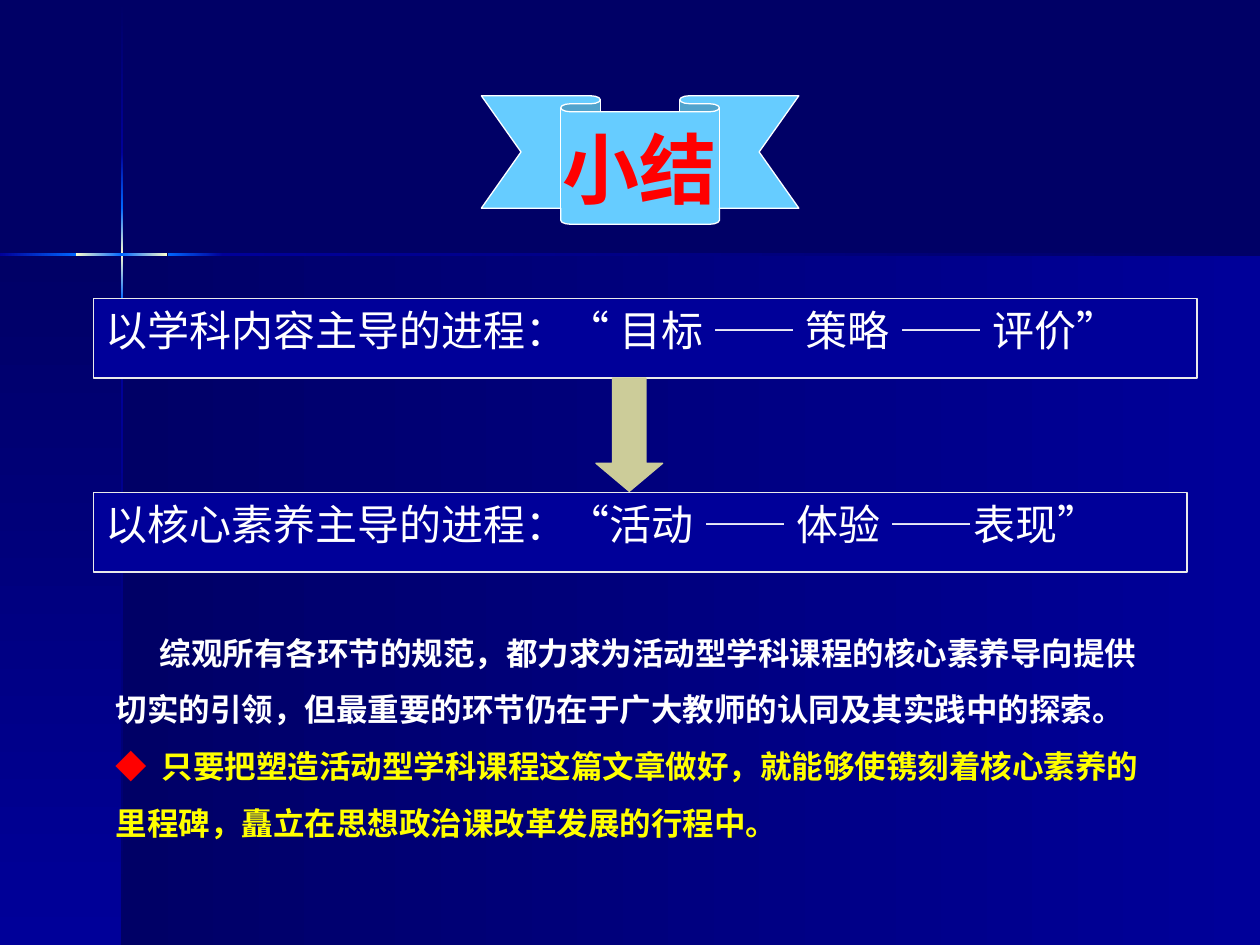
"""Build the summary slide with a ribbon, two linked processes and a closing text."""
from copy import deepcopy

from lxml import etree
from pptx import Presentation
from pptx.dml.color import RGBColor
from pptx.enum.shapes import MSO_SHAPE
from pptx.enum.text import MSO_ANCHOR, PP_ALIGN
from pptx.oxml.ns import qn
from pptx.util import Inches, Pt

RECTANGLE = MSO_SHAPE.RECTANGLE
DOWN_ARROW = MSO_SHAPE.DOWN_ARROW
RIBBON = MSO_SHAPE.DOWN_RIBBON
TOP, MIDDLE = MSO_ANCHOR.TOP, MSO_ANCHOR.MIDDLE
CENTER, JUSTIFY, LEFT = PP_ALIGN.CENTER, PP_ALIGN.JUSTIFY, PP_ALIGN.LEFT

NAVY = RGBColor(0x00, 0x00, 0x66)
BLUE = RGBColor(0x00, 0x00, 0x99)
BRIGHT = RGBColor(0x00, 0x66, 0xFF)
CREAM = RGBColor(0xFF, 0xFF, 0xCC)
SKY = RGBColor(0x66, 0xCC, 0xFF)
KHAKI = RGBColor(0xCC, 0xCC, 0x99)
PALE = RGBColor(0xEA, 0xEA, 0xEA)
WHITE = RGBColor(0xFF, 0xFF, 0xFF)
RED = RGBColor(0xFF, 0x00, 0x00)
YELLOW = RGBColor(0xFF, 0xFF, 0x00)
CJK_FONT = "Noto Sans CJK SC"


def add_block(kind, box, fill, line):
    shape = slide.shapes.add_shape(kind, *map(Inches, box))
    shape.shadow.inherit = False
    shape.fill.solid()
    shape.fill.fore_color.rgb = fill
    shape.line.color.rgb = line
    shape.line.width = Pt(0.75)
    return shape


def format_run(run, size, name, color, bold=False):
    run.font.size = Pt(size)
    run.font.name = name
    run.font.color.rgb = color
    run.font.bold = bold
    east_asian = etree.SubElement(run.font._element, qn("a:ea"))
    east_asian.set("typeface", CJK_FONT)


presentation = Presentation()
presentation.slide_width = Inches(10)
presentation.slide_height = Inches(7.5)
slide = presentation.slides.add_slide(presentation.slide_layouts[6])
slide.background.fill.solid()
slide.background.fill.fore_color.rgb = NAVY

DOWNWARD, RIGHTWARD = 270, 0
gradient_bands = [
    ((0.97, 2.02, 9.03, 5.48), RIGHTWARD, (NAVY, BLUE)),
    ((0, 2.02, 0.97, 5.48), DOWNWARD, (NAVY, BLUE)),
    ((0.96, 0.01, 0.02, 1.21), DOWNWARD, (NAVY, BLUE)),
    ((0.96, 2.82, 0.02, 4.68), DOWNWARD, (BLUE, NAVY)),
    ((1.77, 2.01, 8.23, 0.02), RIGHTWARD, (BLUE, NAVY)),
    ((0.96, 2.38, 0.02, 0.44), DOWNWARD, (BRIGHT, BLUE)),
    ((0.96, 1.21, 0.02, 0.44), DOWNWARD, (BLUE, BRIGHT)),
    ((0.96, 1.65, 0.02, 0.73), DOWNWARD, (BRIGHT, CREAM, BRIGHT)),
    ((0, 2.01, 0.61, 0.02), RIGHTWARD, (BLUE, BRIGHT)),
    ((1.33, 2.01, 0.44, 0.02), RIGHTWARD, (BRIGHT, BLUE)),
    ((0.6, 2.01, 0.73, 0.02), RIGHTWARD, (CREAM, BRIGHT, CREAM)),
]
for box, angle, colors in gradient_bands:
    band = slide.shapes.add_shape(RECTANGLE, *map(Inches, box))
    band.shadow.inherit = False
    band.line.fill.background()
    band.fill.gradient()
    band.fill.gradient_angle = angle
    stop_list = band._element.spPr.find(qn("a:gradFill")).find(qn("a:gsLst"))
    if len(colors) == 3:
        middle_stop = deepcopy(stop_list[0])
        middle_stop.set("pos", "50000")
        stop_list.insert(1, middle_stop)
    for stop, color in zip(band.fill.gradient_stops, colors):
        stop.color.rgb = color

processes = [
    (2.37, 8.76, "以学科内容主导的进程：“ 目标 —— 策略 —— 评价”"),
    (3.91, 8.68, "以核心素养主导的进程：“活动 —— 体验 ——表现”"),
]
for top, width, text in processes:
    process = add_block(RECTANGLE, (0.74, top, width, 0.63), BLUE, PALE)
    process.text_frame.text = text
    process.text_frame.word_wrap = True
    process.text_frame.vertical_anchor = TOP
    paragraph = process.text_frame.paragraphs[0]
    paragraph.alignment = JUSTIFY
    format_run(paragraph.runs[0], 24, CJK_FONT, WHITE)

arrow = add_block(DOWN_ARROW, (4.73, 3, 0.53, 0.9), KHAKI, KHAKI)
arrow.adjustments[0] = 0.5
arrow.adjustments[1] = 0.42

ribbon = add_block(RIBBON, (3.82, 0.76, 2.52, 1.02), SKY, WHITE)
ribbon.adjustments[0] = 0.125
ribbon.adjustments[1] = 0.5
ribbon.text_frame.text = "小结"
ribbon.text_frame.word_wrap = False
ribbon.text_frame.vertical_anchor = MIDDLE
paragraph = ribbon.text_frame.paragraphs[0]
paragraph.alignment = CENTER
format_run(paragraph.runs[0], 44, "Cabin", RED, True)

closing = slide.shapes.add_textbox(Inches(0.82), Inches(4.83), Inches(8.51), Inches(1.92))
closing_frame = closing.text_frame
closing_frame.word_wrap = True
closing_paragraphs = [
    (0.35, [("综观所有各环节的规范，都力求为活动型学科课程的核心素养导向提供切实的引领，但最重要的环节仍在于广大教师的认同及其实践中的探索。", WHITE)]),
    (0, [("◆  ", RED), ("只要把塑造活动型学科课程这篇文章做好，就能够使镌刻着核心素养的里程碑，矗立在思想政治课改革发展的行程中。", YELLOW)]),
]
for index, (indent, parts) in enumerate(closing_paragraphs):
    paragraph = closing_frame.add_paragraph() if index else closing_frame.paragraphs[0]
    paragraph.alignment = LEFT
    paragraph.line_spacing = 1.5
    properties = paragraph._p.get_or_add_pPr()
    properties.set("marL", "0")
    properties.set("indent", str(Inches(indent)))
    for text, color in parts:
        run = paragraph.add_run()
        run.text = text
        format_run(run, 18, "Arial", color, True)

presentation.save("out.pptx")
